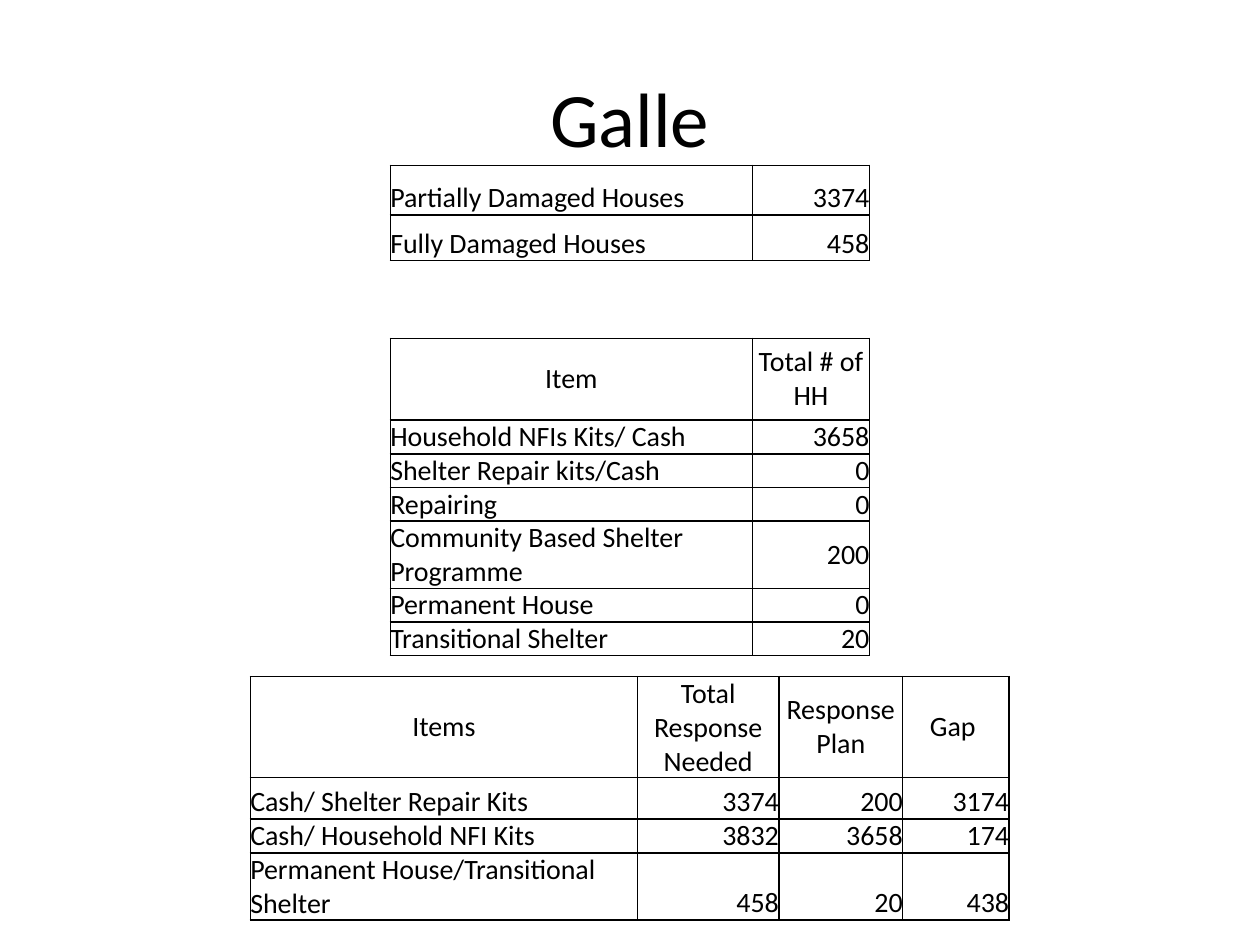
"""Build the Galle slide: housing damage, planned support and remaining gaps."""
from lxml import etree
from pptx import Presentation
from pptx.dml.color import RGBColor
from pptx.enum import text
from pptx.oxml import ns
from pptx.util import Pt

COLORS = {"ink": "000000"}
FONT = "Calibri"
LEFT, CENTER, RIGHT = text.PP_ALIGN.LEFT, text.PP_ALIGN.CENTER, text.PP_ALIGN.RIGHT
MIDDLE, BOTTOM = text.MSO_ANCHOR.MIDDLE, text.MSO_ANCHOR.BOTTOM


def write(para, words, size, align):
    para.text = words
    para.alignment = align
    para.font.name = FONT
    para.font.size = Pt(size)
    para.font.bold = False
    para.font.color.rgb = RGBColor.from_string(COLORS["ink"])


def add_borders(cell):
    props = cell._tc.get_or_add_tcPr()
    for index, side in enumerate(("lnL", "lnR", "lnT", "lnB")):
        line = etree.Element(ns.qn(f"a:{side}"), w=str(Pt(1)))
        fill = etree.SubElement(line, ns.qn("a:solidFill"))
        etree.SubElement(fill, ns.qn("a:srgbClr"), val=COLORS["ink"])
        props.insert(index, line)


deck = Presentation()
deck.slide_width, deck.slide_height = Pt(720), Pt(540)
page = deck.slides.add_slide(deck.slide_layouts[6])

title = page.shapes.add_textbox(Pt(36), Pt(21.6), Pt(648), Pt(90)).text_frame
title.word_wrap = True
title.vertical_anchor = MIDDLE
write(title.paragraphs[0], "Galle", 44, CENTER)

support = [
    ("Item", "Total # of HH"),
    ("Household NFIs Kits/ Cash", "3658"),
    ("Shelter Repair kits/Cash", "0"),
    ("Repairing", "0"),
    ("Community Based Shelter Programme", "200"),
    ("Permanent House", "0"),
    ("Transitional Shelter", "20"),
]
damage = [("Partially Damaged Houses", "3374"), ("Fully Damaged Houses", "458")]
gaps = [
    ("Items", "Total Response Needed", "Response Plan", "Gap "),
    ("Cash/ Shelter Repair Kits", "3374", "200", "3174"),
    ("Cash/ Household NFI Kits", "3832", "3658", "174"),
    ("Permanent House/Transitional Shelter", "458", "20", "438"),
]
pair_widths = [207, 66.8]
tables = [
    (support, 223, 193.3, pair_widths, [46.8] + [14.4] * 6, True, MIDDLE),
    (damage, 223, 94.5, pair_widths, [28.3, 26.2], False, BOTTOM),
    (gaps, 143, 386.7, [221.3, 80.8, 70.8, 60.8], [46.8, 23.8, 14.4, 14.4], True, BOTTOM),
]

for rows, left, top, widths, heights, has_header, body_anchor in tables:
    grid = page.shapes.add_table(
        len(rows), len(widths), Pt(left), Pt(top), Pt(sum(widths)), Pt(sum(heights))
    ).table
    grid.first_row = grid.horz_banding = False
    for column, width in zip(grid.columns, widths):
        column.width = Pt(width)
    for r, (values, height) in enumerate(zip(rows, heights)):
        grid.rows[r].height = Pt(height)
        is_header = has_header and r == 0
        for c, value in enumerate(values):
            cell = grid.cell(r, c)
            cell.margin_left = cell.margin_right = cell.margin_top = cell.margin_bottom = 0
            cell.vertical_anchor = MIDDLE if is_header else body_anchor
            cell.fill.background()
            add_borders(cell)
            align = CENTER if is_header else RIGHT if c else LEFT
            write(cell.text_frame.paragraphs[0], value, 16, align)

deck.save("out.pptx")
